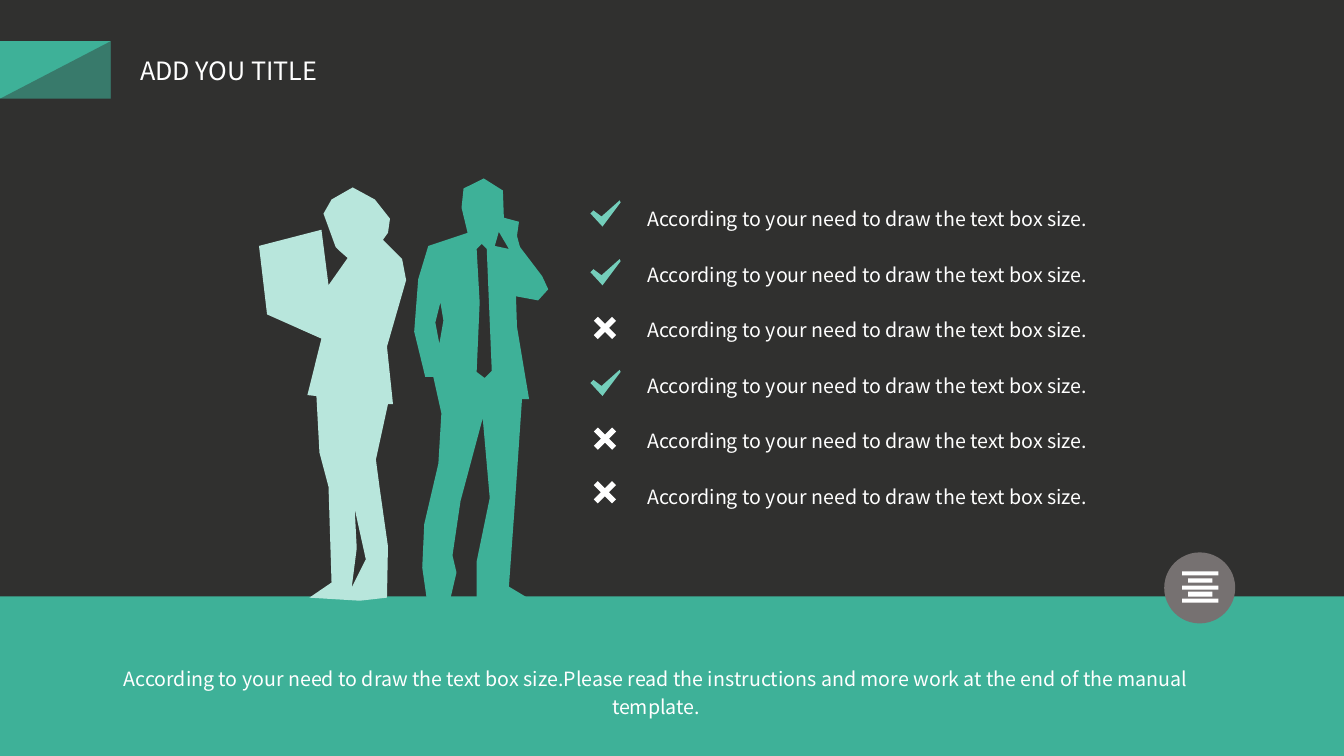
from lxml import etree
from pptx import Presentation
from pptx.dml.color import RGBColor
from pptx.enum.shapes import MSO_SHAPE
from pptx.enum.text import MSO_AUTO_SIZE, PP_ALIGN
from pptx.oxml.ns import qn
from pptx.util import Cm, Pt

RECTANGLE = MSO_SHAPE.RECTANGLE
RIGHT_TRIANGLE = MSO_SHAPE.RIGHT_TRIANGLE
OVAL = MSO_SHAPE.OVAL
CROSS = MSO_SHAPE.CROSS
LEFT, CENTER = PP_ALIGN.LEFT, PP_ALIGN.CENTER
FIT_TEXT = MSO_AUTO_SIZE.SHAPE_TO_FIT_TEXT

FONT = "Noto Sans CJK JP"
COLORS = {
    "dark": "30302F",
    "teal": "3EB198",
    "mint": "B8E6DC",
    "tick": "74CEBB",
    "gray": "767171",
    "white": "FFFFFF",
}
LINE_TEXT = "According to your need to draw the text box size."
FOOTER_TEXT = LINE_TEXT + (
    "Please read the instructions and more work at the end of the manual template."
)

# Outlines are contours of points on a grid of GRID units
GRID = Cm(0.0254)
WOMAN = [
    [(337, 249), (345, 256), (326, 283), (319, 228), (257, 244), (265, 312),
     (319, 336), (305, 392), (314, 393), (317, 449), (326, 483), (329, 578),
     (307, 593), (357, 596), (384, 593), (385, 542), (377, 486), (373, 456),
     (385, 401), (390, 401), (384, 344), (403, 278), (399, 257), (380, 238),
     (385, 231), (387, 217), (372, 198), (350, 186), (329, 198), (321, 212),
     (333, 245)],
    [(349, 583), (354, 544), (352, 505), (363, 555)],
]
MAN = [
    [(538, 274), (516, 245), (513, 234), (515, 220), (500, 216), (499, 189),
     (480, 177), (460, 187), (458, 206), (464, 231), (425, 244), (415, 277),
     (411, 329), (422, 374), (430, 374), (438, 410), (435, 460), (421, 520),
     (419, 563), (424, 598), (446, 598), (453, 568), (449, 551), (457, 497),
     (479, 415), (486, 494), (473, 557), (473, 594), (525, 594), (505, 582),
     (511, 499), (518, 396), (525, 396), (513, 324), (512, 294), (534, 298),
     (544, 287)],
    [(436, 341), (432, 320), (437, 300), (440, 318)],
    [(481, 375), (473, 369), (476, 300), (473, 247), (478, 242), (483, 247),
     (488, 368)],
    [(505, 247), (491, 244), (495, 230)],
]
TICK = [[(12, 26), (30, 2), (29, 0), (11, 16), (3, 10), (0, 13)]]
# Mark and its top in cm, row by row
MARKS = [("tick", 5.05), ("tick", 6.53), ("cross", 7.98),
         ("tick", 9.32), ("cross", 10.77), ("cross", 12.12)]


def paint(shape, color):
    shape.shadow.inherit = False
    shape.fill.solid()
    shape.fill.fore_color.rgb = RGBColor.from_string(COLORS[color])
    shape.line.fill.background()
    return shape


def add_preset(shapes, kind, left, top, width, height, color):
    shape = shapes.add_shape(kind, Cm(left), Cm(top), Cm(width), Cm(height))
    return paint(shape, color)


def add_outline(slide, contours, color, left=0, top=0):
    builder = slide.shapes.build_freeform(*contours[0][0], scale=GRID)
    builder.add_line_segments(contours[0][1:])
    for contour in contours[1:]:
        builder.move_to(*contour[0])
        builder.add_line_segments(contour[1:])
    return paint(builder.convert_to_shape(Cm(left), Cm(top)), color)


def add_text(slide, text, left, top, width, height, size, align=LEFT):
    box = slide.shapes.add_textbox(Cm(left), Cm(top), Cm(width), Cm(height))
    frame = box.text_frame
    frame.text = text
    frame.auto_size = FIT_TEXT
    paragraph = frame.paragraphs[0]
    paragraph.alignment = align
    paragraph.font.name = FONT
    paragraph.font.size = Pt(size)
    paragraph.font.color.rgb = RGBColor.from_string(COLORS["white"])
    return frame


def add_body_text(slide, text, left, top, width, align=LEFT):
    frame = add_text(slide, text, left, top, width, 0.71, 14, align)
    frame.word_wrap = True
    frame.margin_left = frame.margin_right = 0
    frame.margin_top = frame.margin_bottom = 0
    frame.paragraphs[0].line_spacing = 1.2


def add_title(slide):
    group = slide.shapes.add_group_shape()
    tag = (0, 1.04, 2.79, 1.45)
    add_preset(group.shapes, RECTANGLE, *tag, "teal")
    shade = add_preset(group.shapes, RIGHT_TRIANGLE, *tag, "dark")
    shade._element.spPr.find(qn("a:xfrm")).set("flipH", "1")
    color = shade._element.spPr.find(qn("a:solidFill"))[0]
    etree.SubElement(color, qn("a:alpha")).set("val", "42000")
    add_text(slide, "ADD YOU TITLE", 3.28, 1.27, 5.33, 1.02, 18).word_wrap = False


def add_cross(slide, top):
    cross = add_preset(slide.shapes, CROSS, 14.92, top - 0.04, 0.65, 0.65, "white")
    cross.adjustments[0] = 0.39
    cross.rotation = 45


def add_checklist(slide):
    for row, (mark, mark_top) in enumerate(MARKS):
        if mark == "tick":
            add_outline(slide, TICK, "tick", 14.88, mark_top)
        else:
            add_cross(slide, mark_top)
        add_body_text(slide, LINE_TEXT, 16.31, 5.1 + 1.4 * row, 13.23)


def add_badge(slide):
    add_preset(slide.shapes, OVAL, 29.34, 13.92, 1.79, 1.79, "gray")
    bars = []
    for row in range(5):
        inset = 6.5 * (row % 2)
        left, right = inset, 36 - inset
        top = 6.75 * row
        bottom = top + 4.4
        bars.append([(left, top), (right, top), (right, bottom), (left, bottom)])
    add_outline(slide, bars, "white", 29.79, 14.4)


def main():
    presentation = Presentation()
    presentation.slide_width = Cm(33.87)
    presentation.slide_height = Cm(19.05)
    slide = presentation.slides.add_slide(presentation.slide_layouts[6])
    slide.background.fill.solid()
    slide.background.fill.fore_color.rgb = RGBColor.from_string(COLORS["dark"])

    add_title(slide)
    # Ground and figures
    add_preset(slide.shapes, RECTANGLE, 0, 15.03, 33.87, 4.02, "teal")
    add_outline(slide, WOMAN, "mint")
    add_outline(slide, MAN, "teal")

    add_checklist(slide)
    # Round badge and footer
    add_badge(slide)
    add_body_text(slide, FOOTER_TEXT, 2.54, 16.69, 27.99, CENTER)

    presentation.save("out.pptx")


if __name__ == "__main__":
    main()
